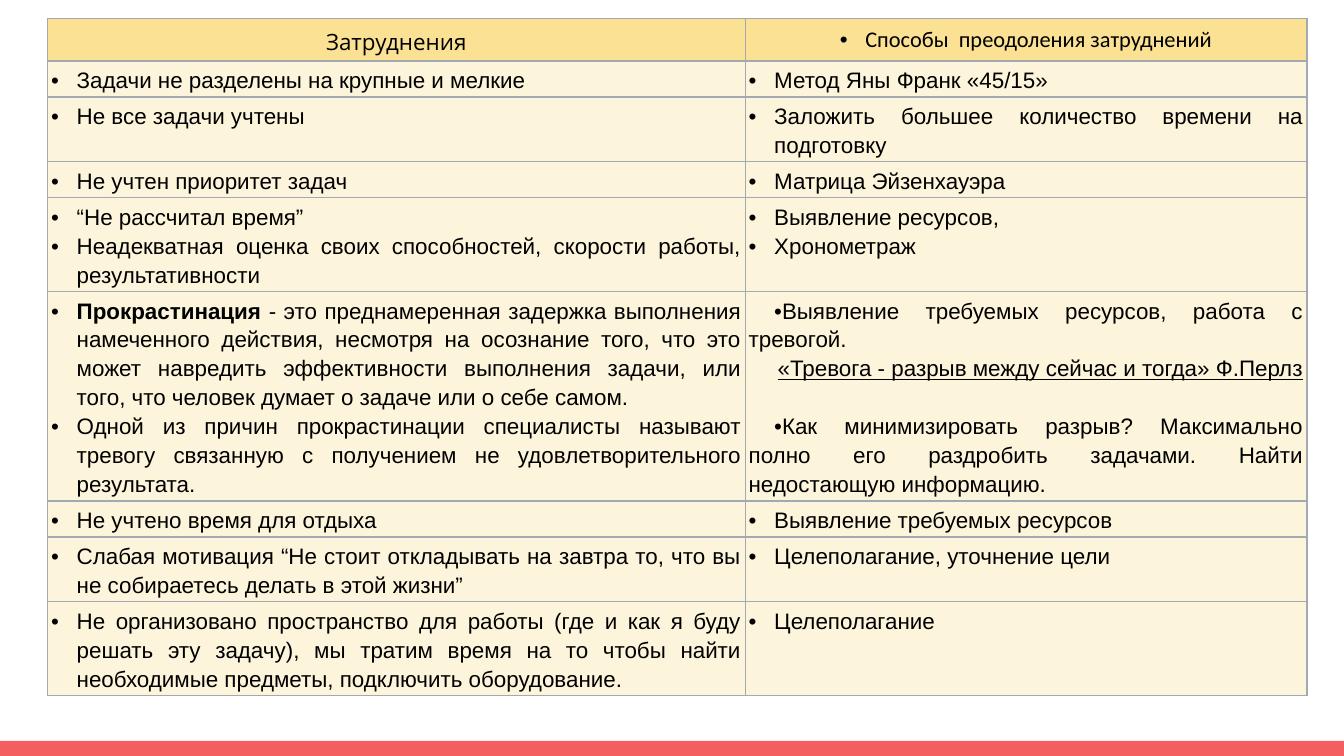
"""Build a slide with a table of time-planning difficulties and ways to overcome them."""
from lxml import etree
from pptx import Presentation
from pptx import util as u
from pptx.dml.color import RGBColor
from pptx.enum import shapes, text
from pptx.oxml import ns

COLORS = {"header": "FAE194", "body": "FDF5DB", "border": "A2A9B1", "bar": "F55E61", "text": "000000"}
INDENT = u.Inches(0.19)
MARGIN = u.Pt(1.9)
BOLD_TERM = "Прокрастинация "
QUOTE = "«Тревога - разрыв между сейчас и тогда» Ф.Перлз"
AFTER_QUOTE = ("Как минимизировать разрыв? Максимально полно его раздробить задачами. "
               "Найти недостающую информацию.")
FLOWING = ("Выявление требуемых ресурсов, работа с тревогой.", AFTER_QUOTE)
HEADERS = {"Затруднения": "Open Sans", "Способы  преодоления затруднений": "Calibri"}
ROWS = [
    (0.25, [[header] for header in HEADERS]),
    (0.25, [["Задачи не разделены на крупные и мелкие"], ["Метод Яны Франк «45/15»"]]),
    (0.46, [["Не все задачи учтены"], ["Заложить большее количество времени на подготовку"]]),
    (0.25, [["Не учтен приоритет задач"], ["Матрица Эйзенхауэра"]]),
    (0.67, [["“Не рассчитал время” ",
             "Неадекватная оценка своих способностей, скорости работы, результативности"],
            ["Выявление ресурсов,", "Хронометраж"]]),
    (1.56, [[BOLD_TERM + "- это преднамеренная задержка выполнения намеченного действия, "
             "несмотря на осознание того, что это может навредить эффективности выполнения "
             "задачи, или того, что человек думает о задаче или о себе самом.",
             "Одной из причин прокрастинации специалисты называют тревогу связанную с "
             "получением не удовлетворительного результата."],
            [FLOWING[0], QUOTE, AFTER_QUOTE]]),
    (0.25, [["Не учтено время для отдыха"], ["Выявление требуемых ресурсов"]]),
    (0.45, [["Слабая мотивация “Не стоит откладывать на завтра то, что вы не собираетесь "
             "делать в этой жизни”"], ["Целеполагание, уточнение цели"]]),
    (0.67, [["Не организовано пространство для работы (где и как я буду решать эту задачу), "
             "мы тратим время на то чтобы найти необходимые предметы, подключить оборудование."],
            ["Целеполагание"]]),
]


def add_borders(cell):
    """Outline all four sides of a cell."""
    properties = cell._tc.get_or_add_tcPr()
    for side in ("lnL", "lnR", "lnT", "lnB"):
        line = etree.SubElement(properties, ns.qn(f"a:{side}"), w=str(u.Pt(0.75)))
        fill = etree.SubElement(line, ns.qn("a:solidFill"))
        etree.SubElement(fill, ns.qn("a:srgbClr"), val=COLORS["border"])


def write_paragraph(paragraph, words):
    """Write one table paragraph with its alignment, bullet and font."""
    align = text.PP_ALIGN
    paragraph.alignment = (align.CENTER if words in HEADERS
                           else align.RIGHT if words == QUOTE else align.JUSTIFY)
    paragraph.line_spacing = 1.15
    paragraph.space_before = u.Pt(15.5 if words == AFTER_QUOTE else 0)
    properties = paragraph._p.get_or_add_pPr()
    bulleted = words not in ("Затруднения", QUOTE)
    margin, indent = (0, INDENT) if words in FLOWING else (INDENT, -INDENT) if bulleted else (0, 0)
    properties.set("marL", str(margin))
    properties.set("indent", str(indent))
    if bulleted:
        etree.SubElement(properties, ns.qn("a:buFont"), typeface="Arial")
        etree.SubElement(properties, ns.qn("a:buChar"), char="•")
    else:
        etree.SubElement(properties, ns.qn("a:buNone"))
    font = paragraph.font
    font.name = HEADERS.get(words, "Arial")
    font.size = u.Pt(12)
    font.color.rgb = RGBColor.from_string(COLORS["text"])
    font.underline = words == QUOTE
    if words.startswith(BOLD_TERM):
        term = paragraph.add_run()
        term.text = BOLD_TERM
        term.font.bold = True
        words = words.removeprefix(BOLD_TERM)
    paragraph.add_run().text = words


presentation = Presentation()
presentation.slide_width = width = u.Inches(10)
presentation.slide_height = height = width * 9 // 16
slide = presentation.slides.add_slide(presentation.slide_layouts[6])

bar_height = int(height * 0.02)
bar = slide.shapes.add_shape(shapes.MSO_SHAPE.RECTANGLE, 0, height - bar_height, width, bar_height)
bar.shadow.inherit = False
bar.fill.solid()
bar.fill.fore_color.rgb = RGBColor.from_string(COLORS["bar"])
bar.line.fill.background()

column_widths = [u.Inches(5.19), u.Inches(4.18)]
row_heights = [u.Inches(row_height) for row_height, _ in ROWS]
table = slide.shapes.add_table(len(ROWS), len(column_widths), u.Pt(25.5), u.Inches(0.14),
                               sum(column_widths), sum(row_heights)).table
table.first_row = table.horz_banding = False
for column, column_width in zip(table.columns, column_widths):
    column.width = column_width

for row_index, (_, contents) in enumerate(ROWS):
    table.rows[row_index].height = row_heights[row_index]
    for column_index, lines in enumerate(contents):
        cell = table.cell(row_index, column_index)
        cell.margin_left = cell.margin_right = cell.margin_top = cell.margin_bottom = MARGIN
        add_borders(cell)
        cell.fill.solid()
        cell.fill.fore_color.rgb = RGBColor.from_string(COLORS["body" if row_index else "header"])
        for line_index, words in enumerate(lines):
            frame = cell.text_frame
            write_paragraph(frame.add_paragraph() if line_index else frame.paragraphs[0], words)

presentation.save("out.pptx")
